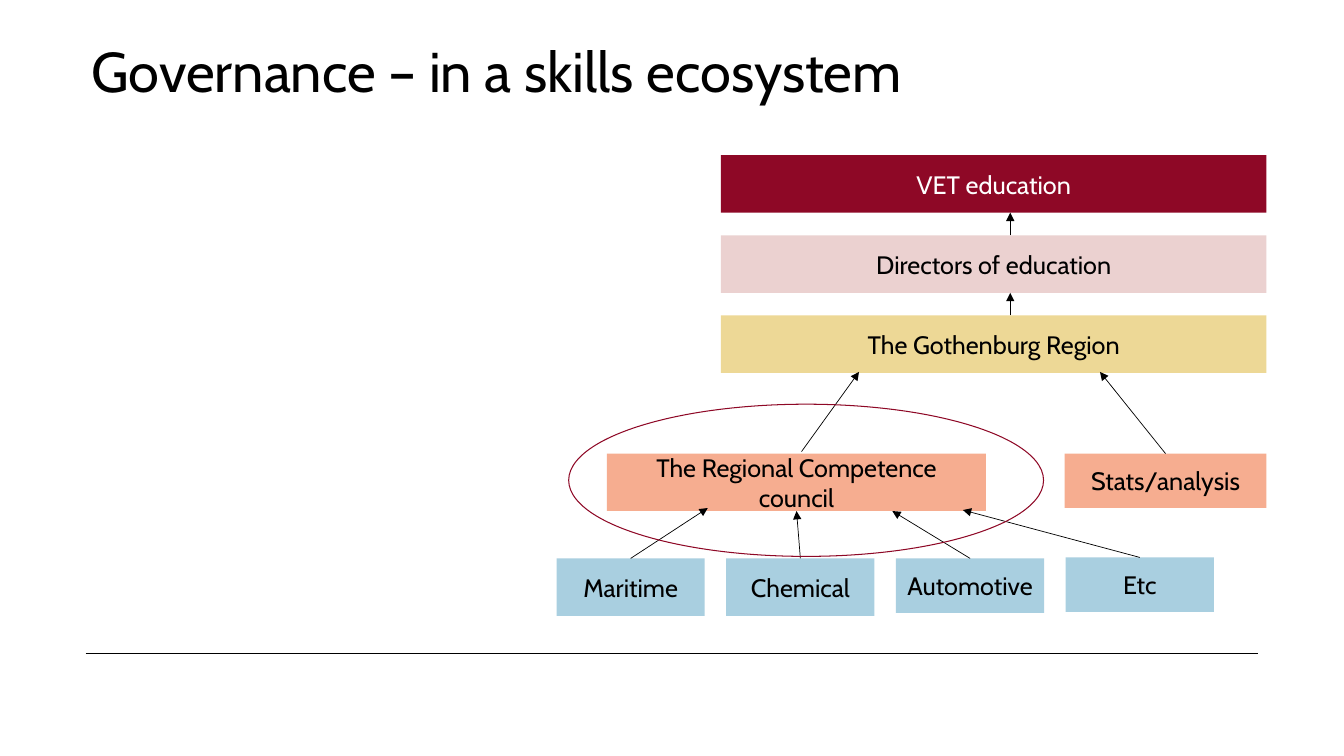
import pptx
import pptx.util
import pptx.dml.color
import pptx.enum.shapes
import pptx.enum.text
import pptx.oxml.ns
import pptx.oxml.xmlchemy

Inches = pptx.util.Inches
Pt = pptx.util.Pt
RGB = pptx.dml.color.RGBColor
SHAPE = pptx.enum.shapes.MSO_SHAPE
ALIGN = pptx.enum.text.PP_ALIGN
ANCHOR = pptx.enum.text.MSO_ANCHOR
qn = pptx.oxml.ns.qn
make = pptx.oxml.xmlchemy.OxmlElement

BLACK = RGB(0x00, 0x00, 0x00)
WHITE = RGB(0xFF, 0xFF, 0xFF)
WINE = RGB(0x8E, 0x08, 0x26)
PINK = RGB(0xEB, 0xD1, 0xD0)
SAND = RGB(0xED, 0xD8, 0x96)
PEACH = RGB(0xF6, 0xAD, 0x90)
BLUE = RGB(0xA9, 0xCF, 0xE0)
FONT = "Cabin"
TOP, BOTTOM = 0, 2


def write(shape, text, size=18, color=BLACK, align=ALIGN.CENTER):
    frame = shape.text_frame
    frame.word_wrap = True
    frame.vertical_anchor = ANCHOR.MIDDLE
    para = frame.paragraphs[0]
    para.alignment = align
    run = para.add_run()
    run.text = text
    run.font.name = FONT
    run.font.size = Pt(size)
    run.font.color.rgb = color


def add_box(slide, text, box, fill, color=BLACK):
    rect = slide.shapes.add_shape(SHAPE.RECTANGLE, *map(Inches, box))
    rect.shadow.inherit = False
    rect.fill.solid()
    rect.fill.fore_color.rgb = fill
    rect.line.fill.background()
    write(rect, text, color=color)
    return rect


def add_line(slide, start, end, head=True):
    line = slide.shapes.add_connector(
        pptx.enum.shapes.MSO_CONNECTOR.STRAIGHT, *map(Inches, start + end))
    line.line.color.rgb = BLACK
    line.line.width = Pt(0.5)
    props = line._element.spPr
    if head:
        tail = make("a:tailEnd")
        tail.set("type", "triangle")
        props.find(qn("a:ln")).append(tail)
    props.append(make("a:effectLst"))
    return line


def add_title(slide, box):
    title = slide.shapes.add_textbox(*map(Inches, box))
    write(title, "Governance – in a skills ecosystem", size=40, align=ALIGN.LEFT)


def add_tower(slide, box):
    left, top, width, height = box
    tall = 0.57
    step = (height - tall) / 2
    levels = [
        ("VET education", WINE, WHITE),
        ("Directors of education", PINK, BLACK),
        ("The Gothenburg Region", SAND, BLACK),
    ]
    for row, (text, fill, color) in enumerate(levels):
        y = top + row * step
        add_box(slide, text, (left, y, width, tall), fill, color)
        if row:
            x = left + 2.87
            add_line(slide, (x, y), (x, y - step + tall))


def add_council(slide, box):
    left, top, width, height = box
    council = add_box(slide, "The Regional Competence council",
                      (left, top, 3.76, height), PEACH)
    stats = add_box(slide, "Stats/analysis",
                    (left + width - 2, top, 2, 0.54), PEACH)
    add_line(slide, (left + 1.93, top - 0.02), (left + 2.5, top - 0.81))
    rise = add_line(slide, (left + width - 1, top), (left + 4.89, top - 0.81))
    rise.begin_connect(stats, TOP)
    return council


def add_sectors(slide, box, council):
    left, top, width, height = box
    wide = 1.47
    step = (width - wide) / 3
    sectors = [
        ("Maritime", 0, height, (1.5, -0.5)),
        ("Chemical", 0, height, None),
        ("Automotive", 0, 0.54, (3.33, -0.47)),
        ("Etc", -0.01, 0.54, (4.03, -0.48)),
    ]
    for col, (text, shift, tall, tip) in enumerate(sectors):
        x, y = left + col * step, top + shift
        rect = add_box(slide, text, (x, y, wide, tall), BLUE)
        dx, dy = tip or (2.38, -0.47)
        line = add_line(slide, (x + wide / 2, y), (left + dx, top + dy))
        line.begin_connect(rect, TOP)
        if tip is None:
            line.end_connect(council, BOTTOM)


def add_ring(slide, box):
    ring = slide.shapes.add_shape(SHAPE.OVAL, *map(Inches, box))
    ring.shadow.inherit = False
    ring.fill.background()
    ring.line.color.rgb = WINE
    ring.line.width = Pt(0.75)


def main():
    deck = pptx.Presentation()
    deck.slide_width = Inches(13.33)
    deck.slide_height = Inches(7.5)
    slide = deck.slides.add_slide(deck.slide_layouts[6])
    add_line(slide, (0.85, 6.48), (12.48, 6.48), head=False)
    add_title(slide, (0.81, 0.3, 11.74, 0.79))
    add_tower(slide, (7.15, 1.54, 5.41, 2.16))
    council = add_council(slide, (6.02, 4.5, 6.54, 0.57))
    add_sectors(slide, (5.52, 5.54, 6.52, 0.57), council)
    add_ring(slide, (5.64, 4.01, 4.71, 1.51))
    deck.save("out.pptx")


if __name__ == "__main__":
    main()
